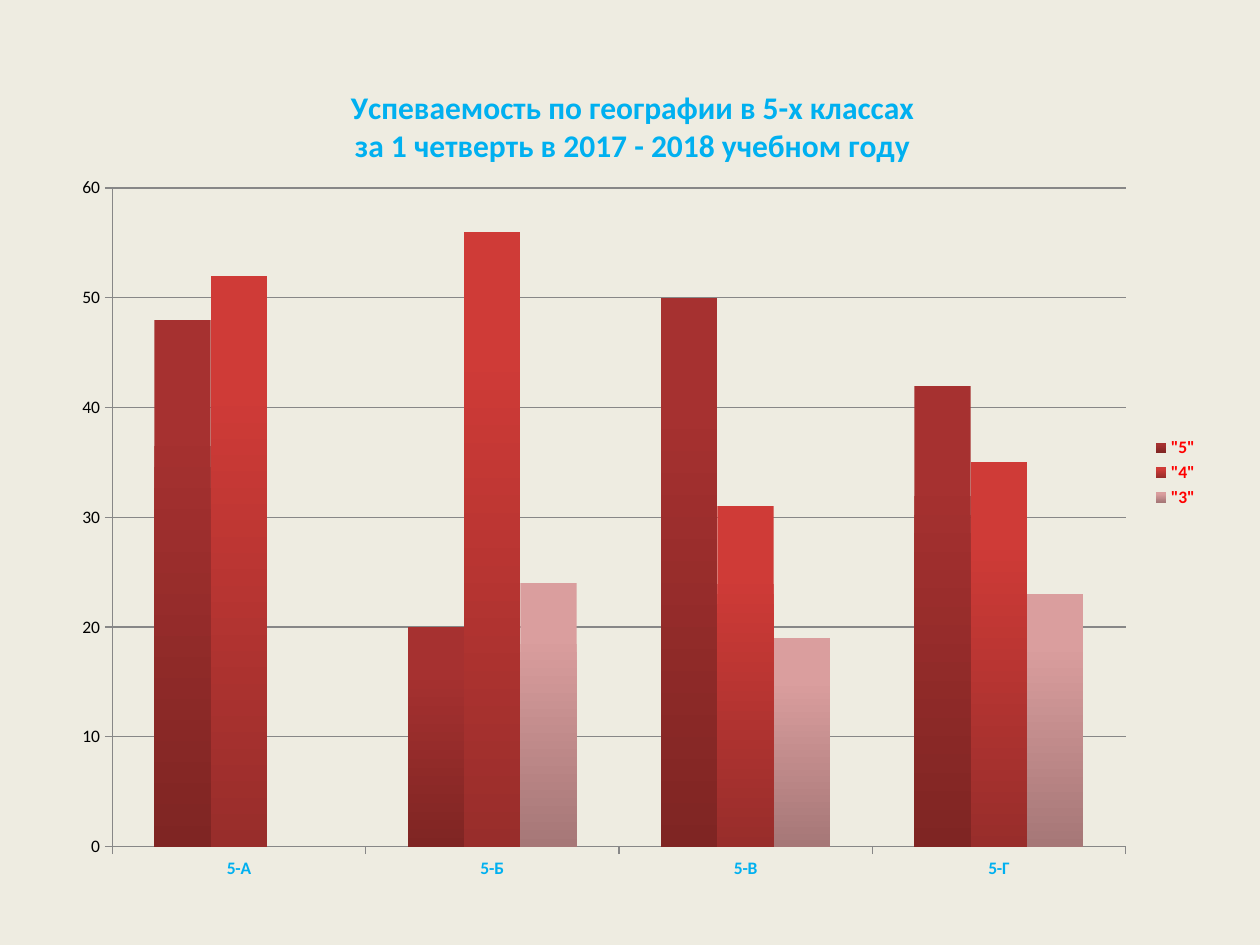
from dataclasses import dataclass

from lxml.etree import SubElement
from pptx import Presentation
from pptx.chart.data import CategoryChartData
from pptx.dml.color import RGBColor
from pptx.enum.chart import XL_CHART_TYPE, XL_LEGEND_POSITION, XL_TICK_MARK
from pptx.oxml import parse_xml
from pptx.oxml.ns import nsdecls, qn
from pptx.util import Inches, Pt


@dataclass(frozen=True)
class Theme:
    font: str = "Calibri"
    title_size: int = 18
    label_size: int = 10
    background: RGBColor = RGBColor(0xEE, 0xEC, 0xE1)
    text: RGBColor = RGBColor(0x00, 0x00, 0x00)
    accent: RGBColor = RGBColor(0x00, 0xB0, 0xF0)
    legend: RGBColor = RGBColor(0xFF, 0x00, 0x00)
    line: RGBColor = RGBColor(0x87, 0x87, 0x87)


theme = Theme()

TITLE = "Успеваемость по географии в 5-х классах\nза 1 четверть в 2017 - 2018 учебном году"
CLASSES = ["5-А", "5-Б", "5-В", "5-Г"]
# Grade, percentage per class, top and bottom colour of the bars
GRADES = [
    ('"5"', [48, 20, 50, 42], "A63130", "7F2523"),
    ('"4"', [52, 56, 31, 35], "CF3B37", "982D2B"),
    ('"3"', [None, 24, 19, 23], "DA9E9E", "A67777"),
]


def set_layout(parent, index, **settings):
    """Place a chart part by fractions of the chart area."""
    for old_layout in parent.findall(qn("c:layout")):
        parent.remove(old_layout)
    layout = parse_xml(f"<c:layout {nsdecls('c')}><c:manualLayout/></c:layout>")
    for name, value in settings.items():
        SubElement(layout[0], qn(f"c:{name}")).set("val", str(value))
    parent.insert(index, layout)


def style_font(font, size, color, bold=False):
    font.name = theme.font
    font.size = Pt(size)
    font.bold = bold
    font.color.rgb = color


presentation = Presentation()
presentation.slide_width = Inches(10)
presentation.slide_height = Inches(7.5)
slide = presentation.slides.add_slide(presentation.slide_layouts[6])
slide.background.fill.solid()
slide.background.fill.fore_color.rgb = theme.background

# Chart
chart_data = CategoryChartData()
chart_data.categories = CLASSES
for grade, values, _, _ in GRADES:
    chart_data.add_series(grade, values)
chart = slide.shapes.add_chart(
    XL_CHART_TYPE.COLUMN_CLUSTERED,
    Inches(0.47), Inches(0.39), Inches(9.14), Inches(6.72), chart_data,
).chart
style_font(chart.font, theme.label_size, theme.text)

# Title
title_frame = chart.chart_title.text_frame
title_frame.text = TITLE
for paragraph in title_frame.paragraphs:
    style_font(paragraph.font, theme.title_size, theme.accent, bold=True)
set_layout(chart.chart_title.element, 1, xMode="edge", yMode="edge", x=0.25, y=0.04)

# Bars
plot = chart.plots[0]
plot.gap_width = 150
plot.overlap = 0
plot.vary_by_categories = False
for series, (_, _, top_color, bottom_color) in zip(plot.series, GRADES):
    fill = series.format.fill
    fill.gradient()
    fill.gradient_angle = 270
    stops = zip(fill.gradient_stops, (0.2, 1), (top_color, bottom_color))
    for stop, position, color in stops:
        stop.position = position
        stop.color.rgb = RGBColor.from_string(color)
set_layout(
    chart.element.find(f".//{qn('c:plotArea')}"), 0,
    layoutTarget="inner", xMode="edge", yMode="edge", x=0.046, y=0.164, w=0.88, h=0.778,
)

# Axes
value_axis = chart.value_axis
value_axis.minimum_scale = 0
value_axis.maximum_scale = 60
value_axis.major_unit = 10
value_axis.has_major_gridlines = True
value_axis.major_gridlines.format.line.color.rgb = theme.line
value_axis.major_gridlines.format.line.width = Pt(0.75)
for axis in (chart.category_axis, value_axis):
    axis.major_tick_mark = XL_TICK_MARK.OUTSIDE
    axis.format.line.color.rgb = theme.line
    axis.format.line.width = Pt(0.75)
style_font(value_axis.tick_labels.font, theme.label_size, theme.text)
style_font(chart.category_axis.tick_labels.font, theme.label_size, theme.accent, bold=True)

# Legend
chart.has_legend = True
chart.legend.position = XL_LEGEND_POSITION.RIGHT
chart.legend.include_in_layout = False
style_font(chart.legend.font, theme.label_size, theme.legend, bold=True)

presentation.save("out.pptx")
